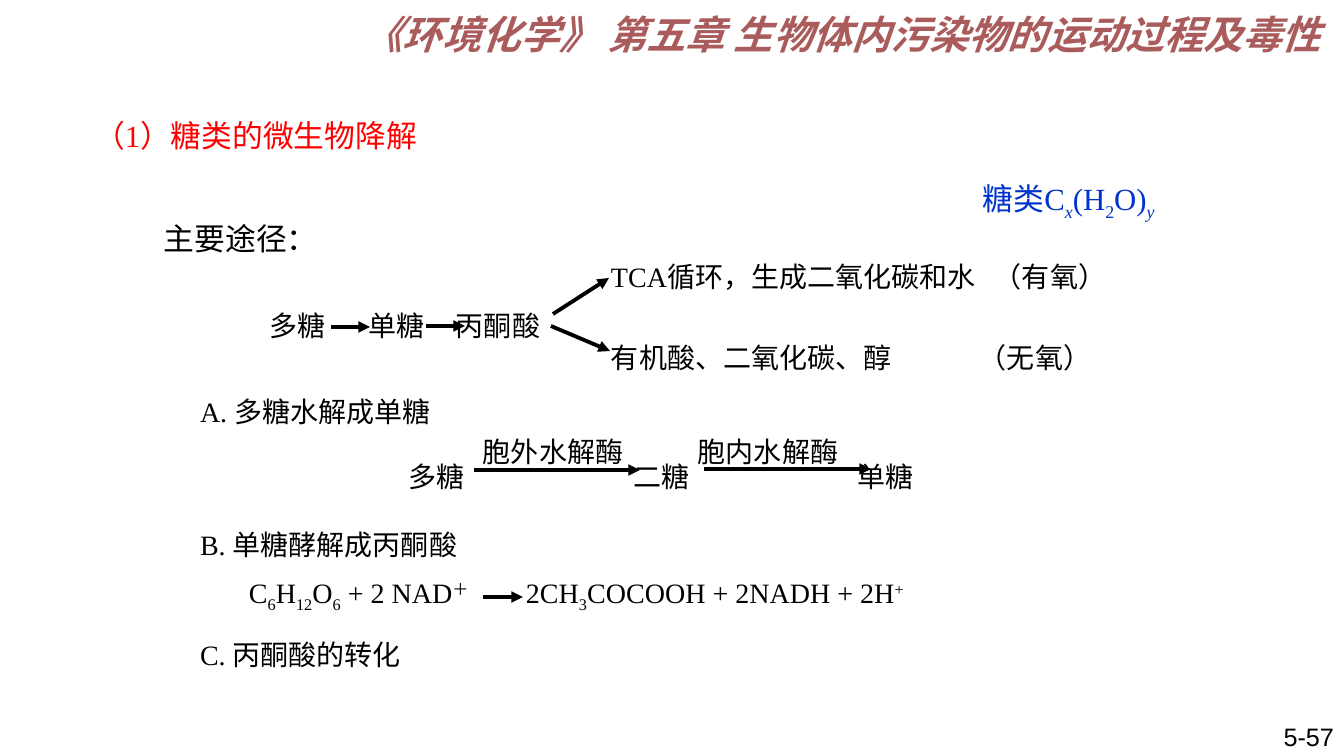
from dataclasses import dataclass

from lxml import etree
from pptx import Presentation
from pptx import util as u
from pptx.dml.color import RGBColor
from pptx.enum import shapes, text
from pptx.oxml import ns


@dataclass(frozen=True)
class Theme:
    ink: str = "000000"
    header: str = "AA5C5C"
    heading: str = "FF0000"
    formula: str = "0033CC"
    serif: str = "Times New Roman"
    sans: str = "Arial"
    han: str = "Noto Sans CJK SC"
    header_face: str = "Noto Sans CJK JP"
    body: int = 20
    large: int = 22
    header_size: int = 28
    number_size: int = 18
    stroke: float = 2.75


THEME = Theme()
SLIDE_WIDTH, SLIDE_HEIGHT = 1344, 756
ROW_HEIGHT = 44
SHIFTS = {"sub": -25000, "var": -25000, "super": 30000}


def px(length):
    return u.Emu(round(length * 12192000 / SLIDE_WIDTH))


def style(para, size, color, face, han, strong):
    font = para.font
    font.size = u.Pt(size)
    font.name = face
    font.bold = font.italic = strong
    font.color.rgb = RGBColor.from_string(color)
    latin = para._p.pPr.find(".//" + ns.qn("a:latin"))
    east = etree.Element(ns.qn("a:ea"), typeface=han)
    latin.addnext(east)


def add_label(page, left, middle, width, content, size=THEME.body, color=THEME.ink,
              face=THEME.serif, han=THEME.han, right=False, strong=False):
    box = page.shapes.add_textbox(
        px(left), px(middle - ROW_HEIGHT // 2), px(width), px(ROW_HEIGHT))
    frame = box.text_frame
    frame.word_wrap = True
    frame.vertical_anchor = text.MSO_ANCHOR.MIDDLE
    frame.margin_left = frame.margin_right = frame.margin_top = frame.margin_bottom = 0
    para = frame.paragraphs[0]
    para.alignment = text.PP_ALIGN.RIGHT if right else text.PP_ALIGN.LEFT
    style(para, size, color, face, han, strong)
    pieces = [(content, "")] if isinstance(content, str) else content
    for words, role in pieces:
        span = para.add_run()
        span.text = words
        if role:
            span._r.get_or_add_rPr().set("baseline", str(SHIFTS[role]))
        if role == "var":
            span.font.italic = True


def add_arrow(page, start_x, start_y, end_x, end_y):
    arrow = page.shapes.add_connector(
        shapes.MSO_CONNECTOR.STRAIGHT, px(start_x), px(start_y), px(end_x), px(end_y))
    arrow.line.width = u.Pt(THEME.stroke)
    arrow.line.color.rgb = RGBColor.from_string(THEME.ink)
    etree.SubElement(arrow.line._get_or_add_ln(), ns.qn("a:tailEnd"), type="triangle")
    etree.SubElement(arrow._element.spPr, ns.qn("a:effectLst"))


def add_headings(page):
    add_label(page, 347, 34, 974, "《环境化学》 第五章 生物体内污染物的运动过程及毒性",
              THEME.header_size, THEME.header, THEME.header_face, THEME.header_face,
              right=True, strong=True)
    add_label(page, 94, 135, 600, "（1）糖类的微生物降解", THEME.large, THEME.heading)
    add_label(page, 164, 238, 200, "主要途径：", THEME.large, face=THEME.han)
    sugar = [("糖类C", ""), ("x", "var"), ("(H", ""), ("2", "sub"), ("O)", ""), ("y", "var")]
    add_label(page, 983, 201, 230, sugar, THEME.large, THEME.formula)
    add_label(page, 1034, 736, 300, "5-57", THEME.number_size, face=THEME.sans, right=True)


def add_pathway(page):
    for left, middle, width, words in (
        (270, 325, 80, "多糖"),
        (369, 325, 80, "单糖"),
        (456, 325, 100, "丙酮酸"),
        (611, 276, 384, "TCA循环，生成二氧化碳和水"),
        (994, 276, 130, "（有氧）"),
        (611, 357, 350, "有机酸、二氧化碳、醇"),
        (979, 357, 130, "（无氧）"),
    ):
        add_label(page, left, middle, width, words)
    for ends in ((331, 327, 370, 327), (426, 326, 465, 326),
                 (553, 314, 609, 278), (551, 326, 610, 351)):
        add_arrow(page, *ends)


def add_steps(page):
    for middle, words in ((411, "A. 多糖水解成单糖"), (544, "B. 单糖酵解成丙酮酸"),
                          (654, "C. 丙酮酸的转化")):
        add_label(page, 200, middle, 400, words)


def add_hydrolysis(page):
    for left, words in ((409, "多糖"), (634, "二糖"), (858, "单糖")):
        add_label(page, left, 476, 80, words)
    for left, words in ((483, "胞外水解酶"), (698, "胞内水解酶")):
        add_label(page, left, 451, 160, words)
    add_arrow(page, 474, 470, 640, 470)
    add_arrow(page, 704, 469, 871, 469)


def add_glycolysis(page):
    reactants = [("C", ""), ("6", "sub"), ("H", ""), ("12", "sub"), ("O", ""),
                 ("6", "sub"), (" + 2 NAD", ""), ("＋", "super")]
    products = [("2CH", ""), ("3", "sub"), ("COCOOH + 2NADH + 2H", ""), ("+", "super")]
    add_label(page, 249, 595, 260, reactants)
    add_label(page, 526, 595, 420, products)
    add_arrow(page, 483, 597, 523, 597)


def main():
    deck = Presentation()
    deck.slide_width, deck.slide_height = px(SLIDE_WIDTH), px(SLIDE_HEIGHT)
    page = deck.slides.add_slide(deck.slide_layouts[6])
    add_headings(page)
    add_pathway(page)
    add_steps(page)
    add_hydrolysis(page)
    add_glycolysis(page)
    deck.save("out.pptx")


if __name__ == "__main__":
    main()
